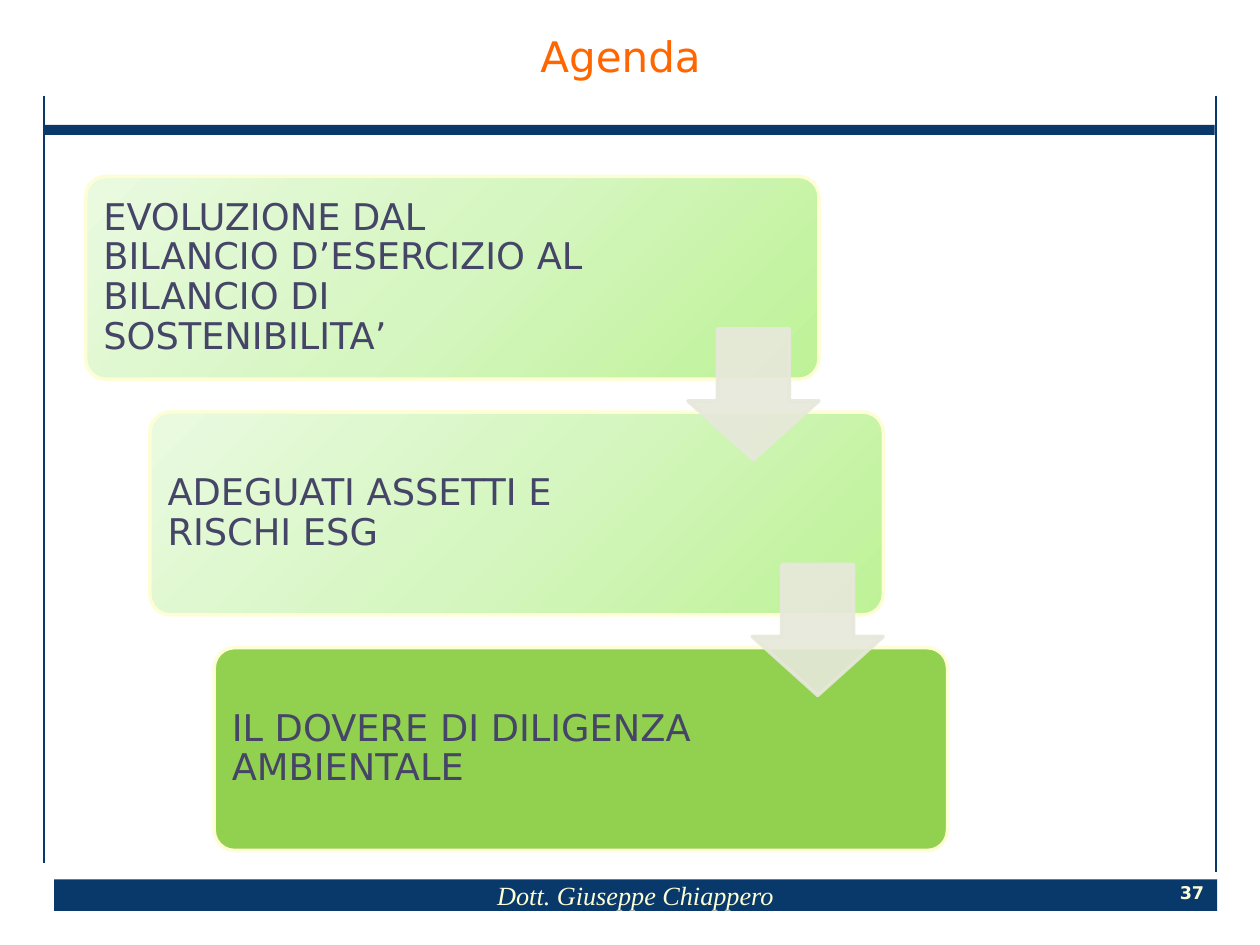
from copy import deepcopy
from dataclasses import dataclass

from lxml.etree import SubElement
from pptx import Presentation
from pptx.dml.color import RGBColor
from pptx.enum.shapes import MSO_CONNECTOR as Connector, MSO_SHAPE as Shape
from pptx.enum.text import MSO_ANCHOR as Anchor, PP_ALIGN as Align
from pptx.oxml.ns import qn
from pptx.util import Inches, Pt


@dataclass(frozen=True)
class Theme:
    navy: str = "09386A"
    cream: str = "FEFED6"
    orange: str = "FF6600"
    ink: str = "454567"
    green: str = "92D050"
    arrow: str = "E7E8DB"
    gradient: tuple = ("BEF297", "D5F6C0", "EAFAE0")
    sans: str = "DejaVu Sans"
    serif: str = "Times New Roman"
    title_size: int = 24
    card_size: int = 21
    footer_size: int = 15
    number_size: int = 10


def rgb(value):
    return RGBColor.from_string(value)


def write(frame, text, *, size, color, font, align=Align.LEFT, bold=False,
          italic=False, spacing=1.0, inset=0, wrap=True):
    frame.word_wrap = wrap
    frame.vertical_anchor = Anchor.MIDDLE
    frame.margin_left = frame.margin_right = Inches(inset)
    frame.margin_top = frame.margin_bottom = Inches(inset)
    para = frame.paragraphs[0]
    para.alignment = align
    para.line_spacing = spacing
    span = para.add_run()
    span.text = text
    span.font.name, span.font.size = font, Pt(size)
    span.font.bold, span.font.italic = bold, italic
    span.font.color.rgb = rgb(color)


class Builder:
    def __init__(self, page, theme):
        self.page = page
        self.theme = theme

    def shape(self, kind, left, top, width, height, fill=None, line=None):
        shape = self.page.shapes.add_shape(
            kind, Inches(left), Inches(top), Inches(width), Inches(height))
        shape.shadow.inherit = False
        if fill:
            shape.fill.solid()
            shape.fill.fore_color.rgb = rgb(fill)
        if line:
            shape.line.color.rgb = rgb(line)
            shape.line.width = Pt(2)
        else:
            shape.line.fill.background()
        return shape

    def text(self, text, left, top, width, height, **style):
        box = self.page.shapes.add_textbox(
            Inches(left), Inches(top), Inches(width), Inches(height))
        write(box.text_frame, text, **style)

    def rule(self, left, top, bottom):
        line = self.page.shapes.add_connector(
            Connector.STRAIGHT, Inches(left), Inches(top), Inches(left), Inches(bottom))
        line.line.color.rgb = rgb(self.theme.navy)
        line.line.width = Pt(1)
        SubElement(line._element.spPr, qn("a:effectLst"))

    def card(self, text, left, top, text_width, fill=None):
        theme = self.theme
        card = self.shape(Shape.ROUNDED_RECTANGLE, left, top, 5.82, 1.61, fill, theme.cream)
        card.adjustments[0] = 0.1
        if not fill:
            self.gradient(card)
        self.text(text, left + 0.05, top + 0.05, text_width, 1.51, size=theme.card_size,
                  color=theme.ink, font=theme.sans, spacing=0.9, inset=0.09)

    def gradient(self, shape):
        """Run the theme gradient from the bottom right to the top left."""
        shape.fill.gradient()
        shape.fill.gradient_angle = 135
        stops = shape._element.spPr.find(".//" + qn("a:gsLst"))
        stops.append(deepcopy(stops[0]))
        for stop, color, position in zip(
                shape.fill.gradient_stops, self.theme.gradient, (0, 0.5, 1)):
            stop.color.rgb = rgb(color)
            stop.position = position

    def arrow(self, left, top):
        color = self.theme.arrow
        arrow = self.shape(Shape.DOWN_ARROW, left, top, 1.04, 1.04, color, color)
        # The first adjustment is the shaft width, the second the head length
        arrow.adjustments[0], arrow.adjustments[1] = 0.55, 0.45
        for paint in arrow._element.spPr.iter(qn("a:srgbClr")):
            SubElement(paint, qn("a:alpha"), val="90000")


def main():
    deck = Presentation()
    deck.slide_width, deck.slide_height = Inches(10), Inches(7.5)
    theme = Theme()
    page = deck.slides.add_slide(deck.slide_layouts[6])
    builder = Builder(page, theme)

    # Frame and footer
    builder.shape(Shape.RECTANGLE, 0.35, 0.99, 9.29, 0.08, theme.navy)
    footer = builder.shape(Shape.RECTANGLE, 0.43, 6.98, 9.23, 0.25, theme.navy)
    write(footer.text_frame, "Dott. Giuseppe Chiappero", size=theme.footer_size,
          color=theme.cream, font=theme.serif, align=Align.CENTER, italic=True)
    builder.rule(0.35, 0.76, 6.85)
    builder.rule(9.65, 0.76, 6.92)
    builder.text("37", 9.33, 6.98, 0.26, 0.2, size=theme.number_size, color=theme.cream,
                 font=theme.sans, align=Align.CENTER, bold=True, wrap=False)

    # Title
    builder.text("Agenda", 0.2, 0.23, 9.45, 0.5, size=theme.title_size, color=theme.orange,
                 font=theme.sans, align=Align.CENTER, spacing=0.8, wrap=False)

    # Staircase of cards
    cards = (
        ("EVOLUZIONE DAL BILANCIO D’ESERCIZIO AL BILANCIO DI SOSTENIBILITA’", 4.09, None),
        ("ADEGUATI ASSETTI E RISCHI ESG", 4.17, None),
        ("IL DOVERE DI DILIGENZA AMBIENTALE", 4.17, theme.green),
    )
    places = [(0.68 + 0.51 * step, 1.4 + 1.87 * step) for step in range(len(cards))]
    for (text, text_width, fill), (left, top) in zip(cards, places):
        builder.card(text, left, top, text_width, fill)

    # Arrows from each card to the next
    for left, top in places[:-1]:
        builder.arrow(left + 4.78, top + 1.21)

    deck.save("out.pptx")


if __name__ == "__main__":
    main()
